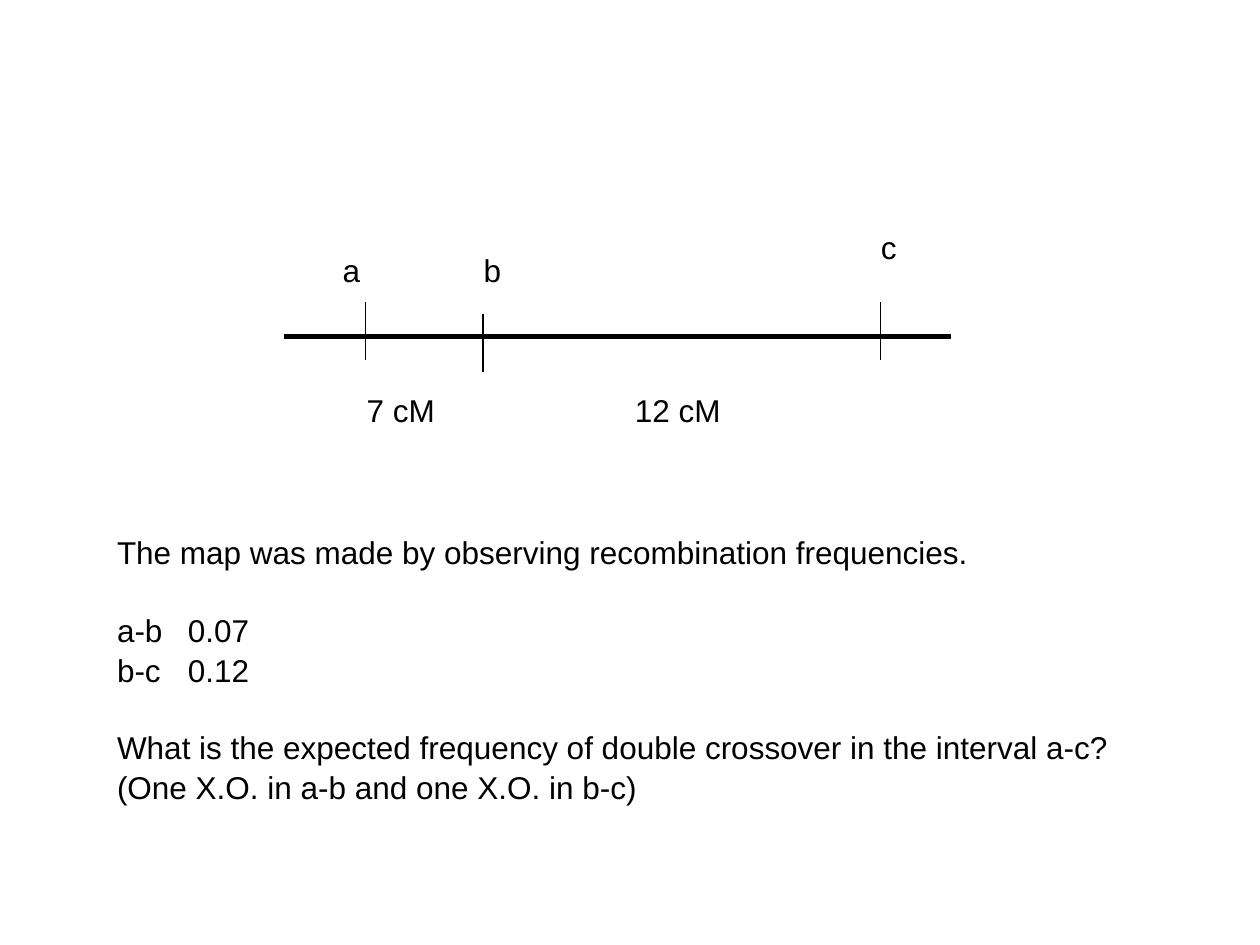
import lxml.etree
import pptx
import pptx.dml.color
import pptx.enum.shapes
import pptx.enum.text
import pptx.oxml.ns
import pptx.util

Cm, Pt = pptx.util.Cm, pptx.util.Pt
qn = pptx.oxml.ns.qn
BLACK = pptx.dml.color.RGBColor(0, 0, 0)
FONT = {"name": "Arial", "size": Pt(18)}
LINE_SPACING = 1.05
BLANK_LINE = Pt(21.7)


def add_rule(shapes, x1, y1, x2, y2, weight):
    rule = shapes.add_connector(
        pptx.enum.shapes.MSO_CONNECTOR.STRAIGHT, Cm(x1), Cm(y1), Cm(x2), Cm(y2))
    rule.line.color.rgb = BLACK
    rule.line.width = Pt(weight)
    lxml.etree.SubElement(rule._element.spPr, qn("a:effectLst"))


def add_text(shapes, left, top, width, height, lines):
    frame = shapes.add_textbox(Cm(left), Cm(top), Cm(width), Cm(height)).text_frame
    frame.word_wrap = True
    frame.auto_size = pptx.enum.text.MSO_AUTO_SIZE.NONE
    for index, line in enumerate(lines):
        paragraph = frame.paragraphs[0] if index == 0 else frame.add_paragraph()
        paragraph.line_spacing = LINE_SPACING
        run = paragraph.add_run()
        run.text = line
        for attribute, value in FONT.items():
            setattr(run.font, attribute, value)
        run.font.color.rgb = BLACK
    return frame


def add_gene_map(slide, left, top, width):
    shapes = slide.shapes.add_group_shape().shapes

    # Chromosome
    axis = top + 2.34
    add_rule(shapes, left, axis, left + width, axis, 3)

    # Gene loci: x and top of each tick
    for x, y in [(1.65, 1.65), (4.01, 1.88), (12.03, 1.65)]:
        add_rule(shapes, left + x, top + y, left + x, top + y + 1.17, 1)

    # Gene names above, distances below
    for label, x, y, label_width in [
        ("a", 0.94, 0.46, 1.88),
        ("b", 3.78, 0.46, 2.82),
        ("c", 11.79, 0, 2.59),
        ("7 cM", 1.42, 3.28, 2.36),
        ("12 cM", 6.83, 3.28, 4.72),
    ]:
        add_text(shapes, left + x, top + y, label_width, 1.14, [label])


def add_question(slide, left, top, width, height):
    frame = add_text(slide.shapes, left, top, width, height, [
        "The map was made by observing recombination frequencies.",
        "a-b\t0.07",
        "b-c\t0.12",
        "What is the expected frequency of double crossover in the interval a-c?",
        "(One X.O. in a-b and one X.O. in b-c)",
    ])
    intro, first_pair, second_pair, question, hint = frame.paragraphs
    for opening in (first_pair, question):
        opening.space_before = BLANK_LINE

    # Align the frequencies on a tab stop
    for pair in (first_pair, second_pair):
        tabs = lxml.etree.SubElement(pair._p.get_or_add_pPr(), qn("a:tabLst"))
        lxml.etree.SubElement(tabs, qn("a:tab"), pos=str(int(Cm(1.43))), algn="l")


def main():
    deck = pptx.Presentation()
    deck.slide_width, deck.slide_height = Cm(25.4), Cm(19.05)
    slide = deck.slides.add_slide(deck.slide_layouts[6])
    add_gene_map(slide, 5.72, 4.44, 13.46)
    add_question(slide, 2.11, 10.59, 20.75, 5.64)
    deck.save("out.pptx")


if __name__ == "__main__":
    main()
